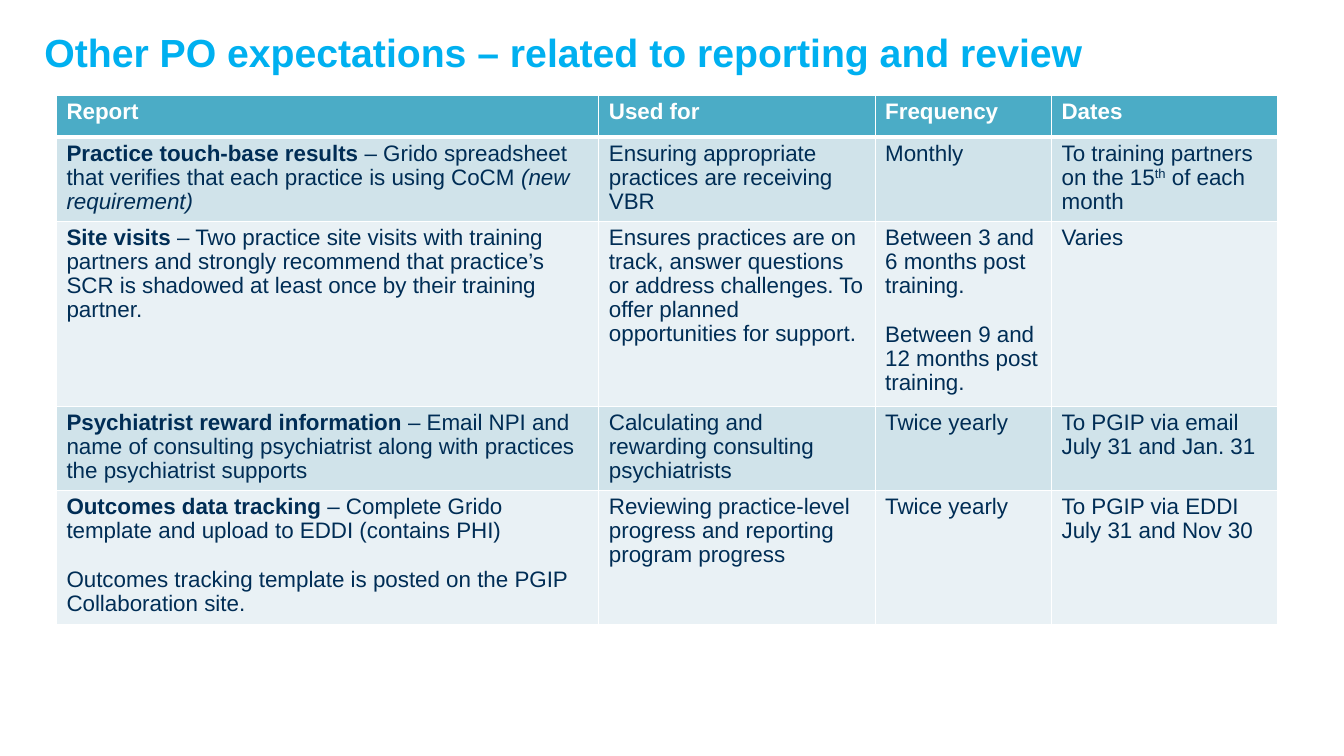
import pptx
import pptx.dml.color
import pptx.enum.text
import pptx.oxml
import pptx.oxml.ns
import pptx.util
from pptx.util import Inches

RGBColor = pptx.dml.color.RGBColor
SKY = RGBColor(0x00, 0xB0, 0xF0)
TEAL = RGBColor(0x4B, 0xAC, 0xC6)
NAVY = RGBColor(0x00, 0x2D, 0x55)
WHITE = RGBColor(0xFF, 0xFF, 0xFF)
BANDS = (RGBColor(0xD0, 0xE3, 0xEA), RGBColor(0xE9, 0xF1, 0xF5))

FONT = "Arial"
LINE_SPACING = 0.96
BLANK_LINE = pptx.util.Pt(17.7)
COLUMN_WIDTHS = (5.38, 2.74, 1.75, 2.24)
ROW_HEIGHTS = (0.41, 0.84, 1.83, 0.84, 1.33)

HEADINGS = ("Report", "Used for", "Frequency", "Dates")
EXPECTATIONS = (
    (
        [[("Practice touch-base results ", "bold"),
          ("– Grido spreadsheet that verifies that each practice is using CoCM ", ""),
          ("(new requirement)", "italic")]],
        "Ensuring appropriate practices are receiving VBR",
        "Monthly",
        [[("To training partners on the 15", ""), ("th", "superscript"),
          (" of each month", "")]],
    ),
    (
        [[("Site visits ", "bold"),
          ("– Two practice site visits with training partners and strongly recommend "
           "that practice’s SCR is shadowed at least once by their training partner.", "")]],
        "Ensures practices are on track, answer questions or address challenges. "
        "To offer planned opportunities for support.",
        [[("Between 3 and 6 months post training.", "")],
         [("Between 9 and 12 months post training.", "spaced")]],
        "Varies",
    ),
    (
        [[("Psychiatrist reward information ", "bold"),
          ("– Email NPI and name of consulting psychiatrist along with practices "
           "the psychiatrist supports", "")]],
        "Calculating and rewarding consulting psychiatrists",
        "Twice yearly",
        "To PGIP via email July 31 and Jan. 31",
    ),
    (
        [[("Outcomes data tracking ", "bold"),
          ("– Complete Grido template and upload to EDDI (contains PHI)", "")],
         [("Outcomes tracking template is posted on the PGIP Collaboration site.", "spaced")]],
        "Reviewing practice-level progress and reporting program progress",
        "Twice yearly",
        [[("To PGIP via EDDI", "")], [("July 31 and Nov 30", "")]],
    ),
)


def format_run(run, size, color, style=""):
    run.font.name = FONT
    run.font.size = pptx.util.Pt(size)
    run.font.color.rgb = color
    run.font.bold = style == "bold"
    run.font.italic = style == "italic"
    if style == "superscript":
        run.font._element.set("baseline", "30000")


def set_borders(cell, bottom_width):
    properties = cell._tc.get_or_add_tcPr()
    widths = (("lnL", 1), ("lnR", 1), ("lnT", 1), ("lnB", bottom_width))
    for position, (edge, width) in enumerate(widths):
        border = pptx.oxml.parse_xml(
            f'<a:{edge} {pptx.oxml.ns.nsdecls("a")} w="{pptx.util.Pt(width)}">'
            f'<a:solidFill><a:srgbClr val="{WHITE}"/></a:solidFill></a:{edge}>'
        )
        properties.insert(position, border)


def fill_cell(cell, content, fill, color, bottom_width=1):
    cell.fill.solid()
    cell.fill.fore_color.rgb = fill
    set_borders(cell, bottom_width)
    paragraphs = [[(content, "")]] if isinstance(content, str) else content
    frame = cell.text_frame
    for index, segments in enumerate(paragraphs):
        paragraph = frame.add_paragraph() if index else frame.paragraphs[0]
        paragraph.line_spacing = LINE_SPACING
        if segments[0][1] == "spaced":
            paragraph.space_before = BLANK_LINE
        for text, style in segments:
            run = paragraph.add_run()
            run.text = text
            format_run(run, 16, color, style)


def place_title(slide, left, top, width, height):
    title = slide.shapes.title
    title.left, title.top, title.width, title.height = left, top, width, height
    frame = title.text_frame
    frame.text = "Other PO expectations – related to reporting and review"
    frame.word_wrap = True
    frame.vertical_anchor = pptx.enum.text.MSO_ANCHOR.MIDDLE
    frame.paragraphs[0].alignment = pptx.enum.text.PP_ALIGN.LEFT
    format_run(frame.paragraphs[0].runs[0], 28, SKY, "bold")


def place_expectations(slide, left, top, width, height):
    rows = len(EXPECTATIONS) + 1
    table = slide.shapes.add_table(rows, len(HEADINGS), left, top, width, height).table
    for column, column_width in zip(table.columns, COLUMN_WIDTHS):
        column.width = Inches(column_width)
    for row, row_height in zip(table.rows, ROW_HEIGHTS):
        row.height = Inches(row_height)
    for column, heading in enumerate(HEADINGS):
        fill_cell(table.cell(0, column), [[(heading, "bold")]], TEAL, WHITE, 3)
    for row, expectation in enumerate(EXPECTATIONS, 1):
        for column, content in enumerate(expectation):
            fill_cell(table.cell(row, column), content, BANDS[(row - 1) % 2], NAVY)


def main():
    presentation = pptx.Presentation()
    presentation.slide_width = Inches(13.33)
    presentation.slide_height = Inches(7.5)
    slide = presentation.slides.add_slide(presentation.slide_layouts[5])
    place_title(slide, Inches(0.34), Inches(0.26), Inches(12.66), Inches(0.51))
    place_expectations(slide, Inches(0.56), Inches(0.95),
                       Inches(sum(COLUMN_WIDTHS)), Inches(sum(ROW_HEIGHTS)))
    presentation.save("out.pptx")


if __name__ == "__main__":
    main()
